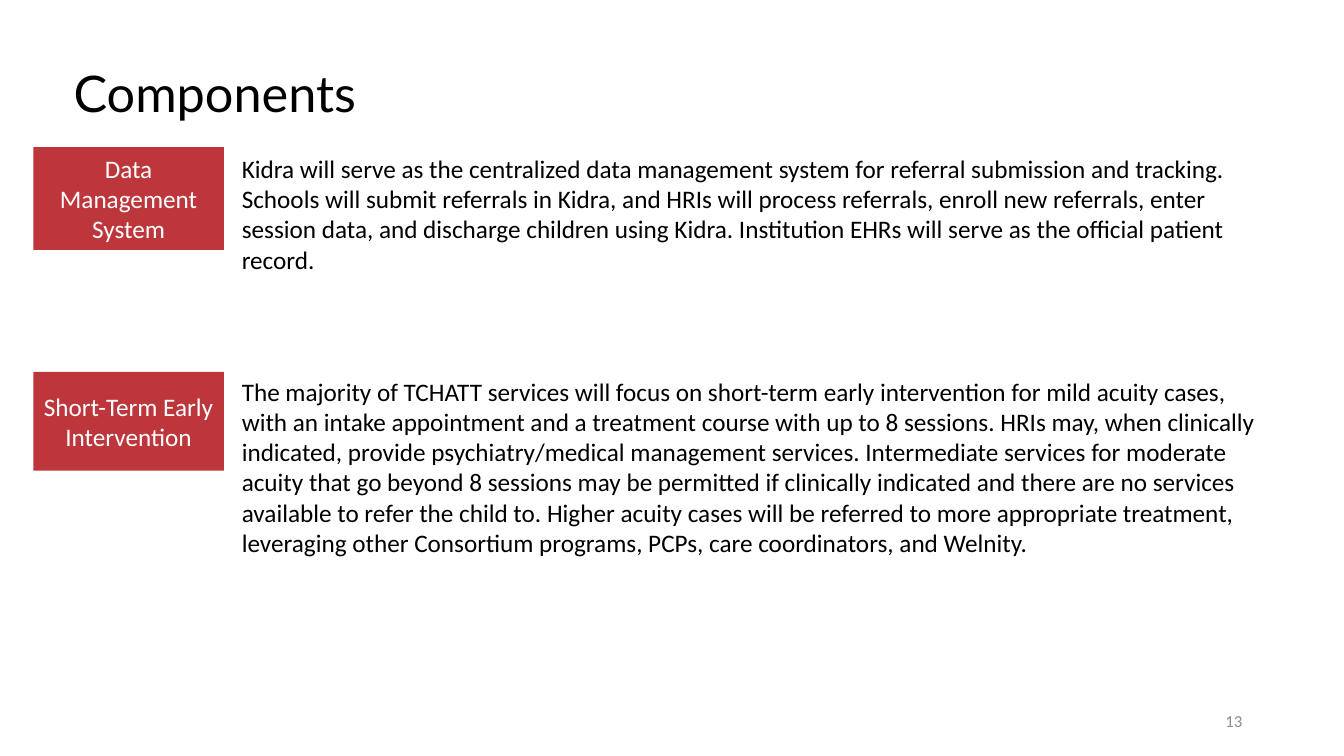
import pptx
import pptx.util
import pptx.dml.color
import pptx.enum.shapes
import pptx.enum.text

Inches = pptx.util.Inches
RGBColor = pptx.dml.color.RGBColor
ALIGN = pptx.enum.text.PP_ALIGN
ANCHOR = pptx.enum.text.MSO_ANCHOR

RED = RGBColor(0xBD, 0x36, 0x3C)
BLACK = RGBColor(0, 0, 0)
WHITE = RGBColor(0xFF, 0xFF, 0xFF)
GREY = RGBColor(0x8C, 0x8C, 0x8C)

# Label, description, label top and height, description top and height
COMPONENTS = [
    ("Data Management System",
     "Kidra will serve as the centralized data management system for referral "
     "submission and tracking. Schools will submit referrals in Kidra, and HRIs "
     "will process referrals, enroll new referrals, enter session data, and "
     "discharge children using Kidra. Institution EHRs will serve as the official "
     "patient record.",
     1.46, 1.02, 1.47, 1.31),
    ("Short-Term Early Intervention",
     "The majority of TCHATT services will focus on short-term early intervention "
     "for mild acuity cases, with an intake appointment and a treatment course "
     "with up to 8 sessions. HRIs may, when clinically indicated, provide "
     "psychiatry/medical management services. Intermediate services for moderate "
     "acuity that go beyond 8 sessions may be permitted if clinically indicated "
     "and there are no services available to refer the child to. Higher acuity "
     "cases will be referred to more appropriate treatment, leveraging other "
     "Consortium programs, PCPs, care coordinators, and Welnity.",
     3.69, 0.98, 3.68, 1.92),
]


class Deck:
    title_font = "Lato"
    body_font = "Calibri"

    def __init__(self, prs):
        self.s = prs.slides.add_slide(prs.slide_layouts[5])

    def add_text(self, sp, text, size, color, font=body_font,
                 align=ALIGN.LEFT, anchor=ANCHOR.TOP):
        tf = sp.text_frame
        tf.word_wrap = True
        tf.vertical_anchor = anchor
        p = tf.paragraphs[0]
        p.alignment = align
        r = p.add_run()
        r.text = text
        r.font.size = pptx.util.Pt(size)
        r.font.name = font
        r.font.color.rgb = color
        return p

    def title(self, text, x, y, w, h):
        sp = self.s.shapes.title
        sp.left, sp.top, sp.width, sp.height = map(Inches, (x, y, w, h))
        p = self.add_text(sp, text, 36, BLACK, self.title_font,
                          anchor=ANCHOR.MIDDLE)
        p.line_spacing = 0.9

    def text(self, text, x, y, w, h, size=18, color=BLACK, **layout):
        sp = self.s.shapes.add_textbox(*map(Inches, (x, y, w, h)))
        self.add_text(sp, text, size, color, **layout)
        return sp

    def label(self, text, x, y, w, h):
        sp = self.s.shapes.add_shape(pptx.enum.shapes.MSO_SHAPE.RECTANGLE,
                                     *map(Inches, (x, y, w, h)))
        sp.shadow.inherit = False
        sp.fill.solid()
        sp.fill.fore_color.rgb = RED
        sp.line.fill.background()
        self.add_text(sp, text, 18, WHITE,
                      align=ALIGN.CENTER, anchor=ANCHOR.MIDDLE)


def main():
    prs = pptx.Presentation()
    prs.slide_width, prs.slide_height = Inches(13.33), Inches(7.5)
    deck = Deck(prs)

    # Title and page number
    deck.title("Components", 0.63, 0.48, 12.08, 0.94)
    deck.text("13", 9.42, 6.95, 3, 0.4, 12, GREY,
              align=ALIGN.RIGHT, anchor=ANCHOR.MIDDLE)

    # Component rows
    for name, description, label_y, label_h, text_y, text_h in COMPONENTS:
        sp = deck.text(description, 2.3, text_y, 10.37, text_h)
        sp.text_frame.auto_size = pptx.enum.text.MSO_AUTO_SIZE.SHAPE_TO_FIT_TEXT
        deck.label(name, 0.33, label_y, 1.89, label_h)

    prs.save("out.pptx")


if __name__ == "__main__":
    main()
